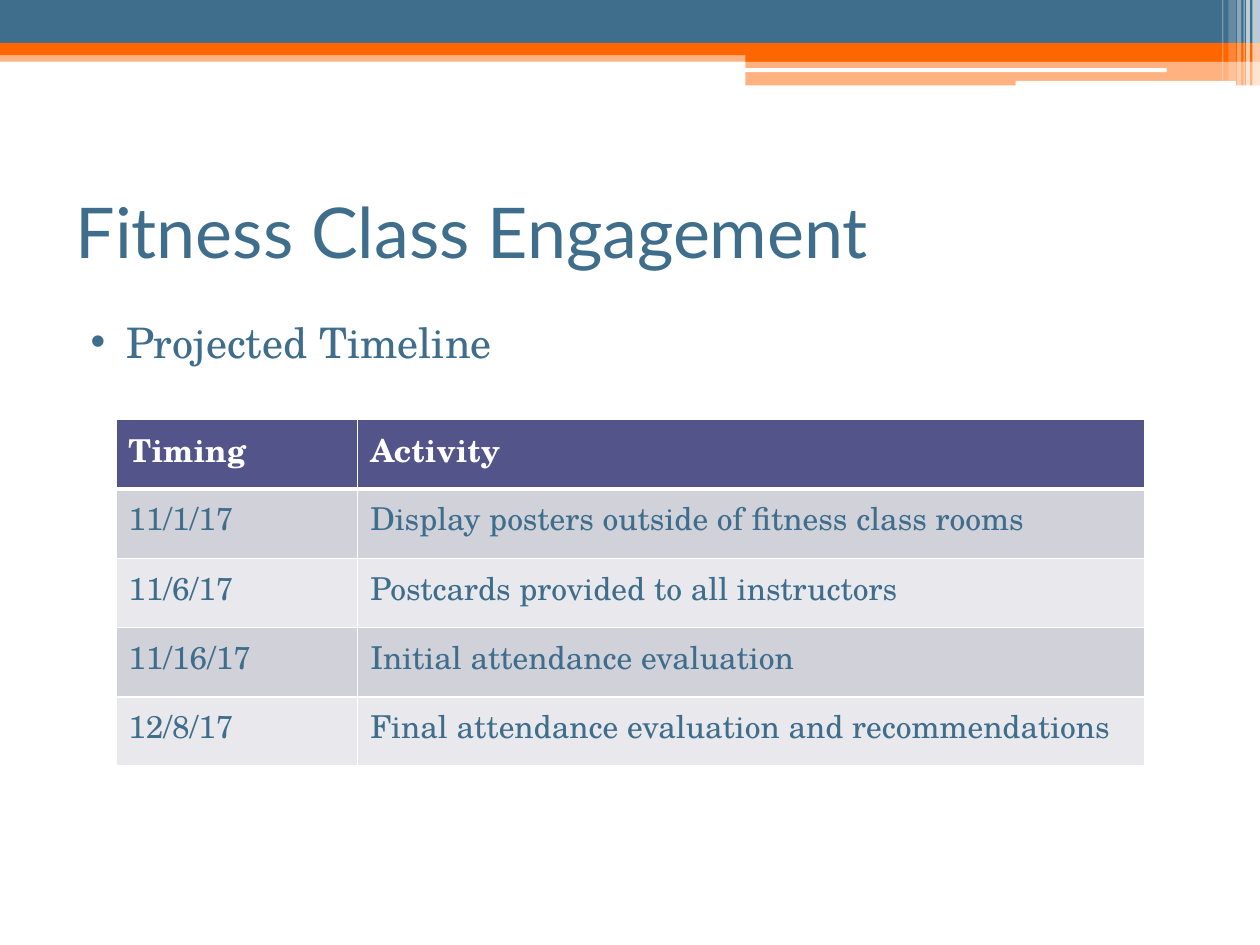
"""Build the Fitness Class Engagement timeline slide."""
from dataclasses import dataclass

from lxml.etree import SubElement
from pptx import Presentation
from pptx.dml.color import RGBColor
from pptx.enum.shapes import MSO_SHAPE
from pptx.enum.text import MSO_ANCHOR, PP_ALIGN
from pptx.oxml.ns import qn
from pptx.slide import Slide
from pptx.text.text import TextFrame
from pptx.util import Pt

COLORS = {
    "blue": "3F6E8C",
    "orange": "FF6600",
    "white": "FFFFFF",
    "header": "53548A",
    "odd_row": "D1D1DA",
    "even_row": "E9E9ED",
}
SERIF = "TeX Gyre Schola"


@dataclass(frozen=True)
class Band:
    left: float
    top: float
    width: float
    height: float
    color: str
    opacity: int = 100
    rounded: bool = False


BANDS = [
    Band(0, 28.8, 720, 6.5, "orange", 50),
    Band(0, 0, 720, 24.5, "blue"),
    Band(0, 24.5, 720, 7, "orange"),
    Band(426, 28, 294, 7.2, "orange"),
    Band(426, 34.8, 294, 14, "orange", 50),
    Band(425.5, 39, 241.2, 2.2, "white", rounded=True),
    Band(580.3, 46.2, 126, 2.9, "white", rounded=True),
    Band(715.7, 0, 4.3, 49, "white", 65),
    Band(712.1, 0, 2.2, 49, "white", 65),
    Band(710.6, 0, 0.7, 49, "white", 60),
    Band(707, 0, 2.2, 49, "white", 40),
    Band(702, 0, 4.3, 46.1, "white", 20),
    Band(698.4, 0, 0.7, 46.1, "white", 30),
]
TIMELINE = [
    ("Timing", "Activity"),
    ("11/1/17", "Display posters outside of fitness class rooms"),
    ("11/6/17", "Postcards provided to all instructors"),
    ("11/16/17", "Initial attendance evaluation"),
    ("12/8/17", "Final attendance evaluation and recommendations"),
]


def rgb(name: str) -> RGBColor:
    return RGBColor.from_string(COLORS[name])


def write(frame: TextFrame, text: str, *, size: float, font: str = SERIF,
          color: str = "blue", bold: bool = False):
    paragraph = frame.paragraphs[0]
    paragraph.alignment = PP_ALIGN.LEFT
    span = paragraph.add_run()
    span.text = text
    span.font.name = font
    span.font.size = Pt(size)
    span.font.bold = bold
    span.font.color.rgb = rgb(color)
    return paragraph


def draw_band(page: Slide, band: Band) -> None:
    kind = MSO_SHAPE.ROUNDED_RECTANGLE if band.rounded else MSO_SHAPE.RECTANGLE
    shape = page.shapes.add_shape(kind, Pt(band.left), Pt(band.top),
                                  Pt(band.width), Pt(band.height))
    shape.shadow.inherit = False
    shape.line.fill.background()
    shape.fill.solid()
    shape.fill.fore_color.rgb = rgb(band.color)
    if band.opacity < 100:
        color = shape._element.spPr.find(".//" + qn("a:srgbClr"))
        SubElement(color, qn("a:alpha"), val=str(band.opacity * 1000))


def place(box, left: float, top: float, width: float, height: float) -> None:
    box.left, box.top = Pt(left), Pt(top)
    box.width, box.height = Pt(width), Pt(height)


def add_bullet(paragraph, indent: float, hanging: float) -> None:
    properties = paragraph._p.get_or_add_pPr()
    properties.set("marL", str(Pt(indent)))
    properties.set("indent", str(-Pt(hanging)))
    color = SubElement(properties, qn("a:buClr"))
    SubElement(color, qn("a:srgbClr"), val=COLORS["blue"])
    SubElement(properties, qn("a:buChar"), char="•")
    paragraph.space_before = Pt(3)


def add_borders(cell, bottom: float) -> None:
    properties = cell._tc.get_or_add_tcPr()
    for side, width in {"L": 1, "R": 1, "T": 1, "B": bottom}.items():
        line = SubElement(properties, qn(f"a:ln{side}"), w=str(Pt(width)))
        fill = SubElement(line, qn("a:solidFill"))
        SubElement(fill, qn("a:srgbClr"), val=COLORS["white"])


def draw_timeline(page: Slide) -> None:
    widths, row_height = (138.2, 450), 39.6
    table = page.shapes.add_table(
        len(TIMELINE), len(widths), Pt(66.2), Pt(239.8),
        Pt(sum(widths)), Pt(row_height * len(TIMELINE))).table
    for column, width in zip(table.columns, widths):
        column.width = Pt(width)
    for index, (row, texts) in enumerate(zip(table.rows, TIMELINE)):
        row.height = Pt(row_height)
        header = index == 0
        fill = "header" if header else "odd_row" if index % 2 else "even_row"
        for cell, text in zip(row.cells, texts):
            add_borders(cell, bottom=3 if header else 1)
            cell.fill.solid()
            cell.fill.fore_color.rgb = rgb(fill)
            write(cell.text_frame, text, size=18, bold=header,
                  color="white" if header else "blue")


def main() -> None:
    deck = Presentation()
    deck.slide_width, deck.slide_height = Pt(720), Pt(540)
    page = deck.slides.add_slide(deck.slide_layouts[1])
    for band in BANDS:
        draw_band(page, band)

    title, body = page.placeholders
    place(title, 36, 90, 648, 84)
    title.text_frame.vertical_anchor = MSO_ANCHOR.MIDDLE
    write(title.text_frame, "Fitness Class Engagement", size=40, font="Lato")

    place(body, 36, 177, 648, 340.5)
    bullet = write(body.text_frame, "Projected Timeline", size=24)
    add_bullet(bullet, indent=28.8, hanging=20.2)

    draw_timeline(page)
    deck.save("out.pptx")


if __name__ == "__main__":
    main()
